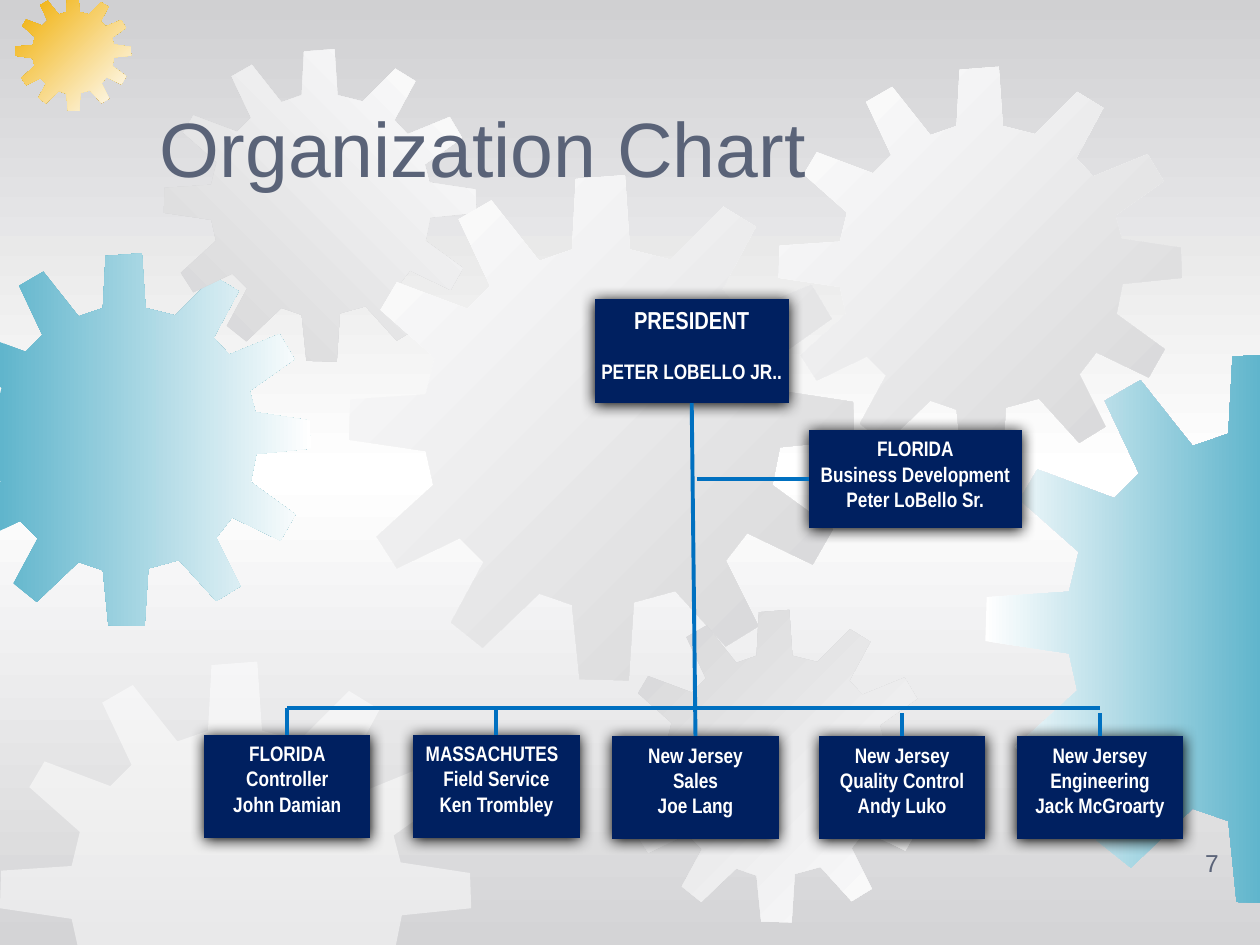
from dataclasses import dataclass

from lxml.etree import SubElement
from pptx import Presentation
from pptx.dml.color import RGBColor
from pptx.enum.shapes import MSO_CONNECTOR as Connector, MSO_SHAPE as Preset
from pptx.enum.text import MSO_ANCHOR as Anchor, PP_ALIGN as Align
from pptx.oxml.ns import qn
from pptx.util import Inches, Pt

SILVER = RGBColor(0xD4, 0xD4, 0xD6)
PALE_SILVER = RGBColor(0xD0, 0xD0, 0xD2)
WHITE = RGBColor(0xFF, 0xFF, 0xFF)
TEAL = RGBColor(0x60, 0xB5, 0xCC)
GOLD = RGBColor(0xF0, 0xAD, 0x00)
SLATE = RGBColor(0x5A, 0x63, 0x78)
NAVY = RGBColor(0x00, 0x20, 0x60)
BLUE = RGBColor(0x00, 0x70, 0xC0)
BLACK = RGBColor(0x00, 0x00, 0x00)

COLUMNS, ROWS = 100, 75
CELL = Inches(0.1)
GEAR_SPAN = 401
GEAR_OUTLINE = (
    (255, 67), (223, 59), (219, 0), (180, 3), (177, 59), (151, 68), (113, 20), (87, 35),
    (112, 88), (94, 106), (38, 85), (25, 107), (68, 145), (61, 174), (1, 178), (0, 210),
    (61, 219), (67, 246), (22, 287), (38, 312), (88, 288), (107, 307), (81, 355), (106, 375),
    (151, 332), (177, 341), (183, 400), (222, 401), (226, 339), (259, 330), (299, 374), (325, 358),
    (299, 306), (316, 284), (368, 309), (384, 281), (336, 246), (342, 216), (401, 210), (400, 180),
    (341, 171), (335, 148), (383, 114), (367, 87), (313, 109), (296, 91), (323, 41), (297, 25),
)


@dataclass
class Gear:
    """A gear placed by column, row and span in grid cells."""
    column: float
    row: float
    span: float
    colors: tuple
    angle: int = 0


@dataclass
class Post:
    """A position in the organization with its box on the grid."""
    column: float
    row: float
    width: float
    height: float
    lines: tuple
    first_size: int = 12
    first_align: Align = Align.CENTER
    gap: int = 0


@dataclass
class Link:
    """A straight line between two grid points."""
    start: tuple
    end: tuple


@dataclass
class Caption:
    """A free text on the grid."""
    column: float
    row: float
    width: float
    height: float
    text: str
    size: int
    align: Align


GEARS = (
    Gear(-4.9, 20.1, 29.6, (TEAL, WHITE)),
    Gear(1.2, -0.4, 9.2, (GOLD, WHITE), 45),
    Gear(13, 3.9, 24.8, (SILVER, WHITE), 315),
    Gear(27.7, 13.9, 40.1, (WHITE, SILVER), 45),
    Gear(0, 52.5, 37.4, (WHITE,)),
    Gear(49.1, 48.4, 24.8, (SILVER, WHITE), 45),
    Gear(61.8, 5.3, 32, (WHITE, SILVER), 45),
    Gear(78.2, 28, 43.7, (WHITE, TEAL)),
)
CAPTIONS = (
    Caption(11.7, 3.3, 85, 12.5, "Organization Chart", 44, Align.LEFT),
    Caption(76.9, 65.1, 20.8, 5, "7", 14, Align.RIGHT),
)
POSTS = (
    Post(47.2, 23.7, 15.4, 8.3, ("PRESIDENT", "PETER LOBELLO JR.."), first_size=14, gap=14),
    Post(16.2, 58.3, 13.2, 8.2, ("FLORIDA", "Controller", "John Damian")),
    Post(32.8, 58.3, 13.2, 8.2, ("MASSACHUTES", "Field Service", "Ken Trombley"), first_align=Align.LEFT),
    Post(48.6, 58.4, 13.2, 8.2, ("New Jersey", "Sales", "Joe Lang")),
    Post(65, 58.4, 13.2, 8.2, ("New Jersey", "Quality Control", "Andy Luko")),
    Post(80.7, 58.4, 13.2, 8.2, ("New Jersey", "Engineering", "Jack McGroarty")),
    Post(64.2, 34.1, 16.9, 7.8, ("FLORIDA", "Business Development", "Peter LoBello Sr.")),
)
LINKS = (
    Link((22.8, 56.2), (87.3, 56.2)),
    Link((22.8, 56.2), (22.8, 58.3)),
    Link((39.4, 56.2), (39.4, 58.3)),
    Link((71.6, 56.6), (71.6, 58.4)),
    Link((87.3, 56.6), (87.3, 58.4)),
    Link((54.9, 32), (55.2, 58.4)),
    Link((55.3, 38), (64.2, 38)),
)


def cells(*counts: float) -> list:
    """Turn grid counts into lengths."""
    return [round(count * CELL) for count in counts]


def apply(target, formats: dict) -> None:
    """Set each named attribute of the target."""
    for name, value in formats.items():
        setattr(target, name, value)


def paint_gradient(root, stops: tuple, angle: int) -> None:
    """Swap the first solid fill under root for a linear gradient."""
    solid = next(root.iter(qn("a:solidFill")))
    gradient = solid.makeelement(qn("a:gradFill"), {"rotWithShape": "1"})
    stop_list = SubElement(gradient, qn("a:gsLst"))
    for position, color in stops:
        stop = SubElement(stop_list, qn("a:gs"), pos=str(position * 1000))
        SubElement(stop, qn("a:srgbClr"), val=str(color))
    SubElement(gradient, qn("a:lin"), ang=str(angle * 60000), scaled="0")
    solid.getparent().replace(solid, gradient)


def clip(points: list, axis: int, bound: float, side: int) -> list:
    """Cut a polygon at one edge of the page."""
    kept = []
    for before, after in zip(points[-1:] + points[:-1], points):
        depths = [side * (point[axis] - bound) for point in (before, after)]
        if depths[0] * depths[1] < 0:
            share = depths[0] / (depths[0] - depths[1])
            kept.append(tuple(a + share * (b - a) for a, b in zip(before, after)))
        if depths[1] >= 0:
            kept.append(after)
    return kept


def draw_gear(page, gear: Gear) -> None:
    """Draw a gear, cut off at the page edges."""
    scale = gear.span / GEAR_SPAN
    points = [(gear.column + x * scale, gear.row + y * scale) for x, y in GEAR_OUTLINE]
    for axis, limit in enumerate((COLUMNS, ROWS)):
        points = clip(clip(points, axis, 0, 1), axis, limit, -1)
    corners = [cells(*point) for point in points]
    builder = page.shapes.build_freeform(*corners[0])
    builder.add_line_segments(corners[1:], close=True)
    shape = builder.convert_to_shape()
    shape.shadow.inherit = False
    shape.line.fill.background()
    shape.fill.solid()
    shape.fill.fore_color.rgb = gear.colors[0]
    if len(gear.colors) > 1:
        paint_gradient(shape.element, tuple(zip((0, 100), gear.colors)), gear.angle)
    else:
        SubElement(next(shape.element.iter(qn("a:srgbClr"))), qn("a:alpha"), val="50000")


def write(para, text: str, size: int, align: Align, formats: dict) -> None:
    """Fill a paragraph with one formatted span."""
    para.alignment = align
    span = para.add_run()
    span.text = text
    apply(span.font, {"size": Pt(size), **formats})
    span.font.color.rgb = WHITE if formats.get("bold") else SLATE


def draw_caption(page, caption: Caption) -> None:
    """Draw a free text standing on the bottom of its box."""
    box = page.shapes.add_textbox(*cells(caption.column, caption.row, caption.width, caption.height))
    apply(box.text_frame, {"word_wrap": True, "vertical_anchor": Anchor.BOTTOM})
    write(box.text_frame.paragraphs[0], caption.text, caption.size, caption.align, {"name": "Arial"})


def draw_post(page, post: Post) -> None:
    """Draw a shadowed box with the lines of one post."""
    place = cells(post.column, post.row, post.width, post.height)
    box = page.shapes.add_shape(Preset.FLOWCHART_PROCESS, *place)
    box.fill.solid()
    box.fill.fore_color.rgb = NAVY
    box.line.fill.background()
    box.shadow.inherit = False
    effects = next(box.element.iter(qn("a:effectLst")))
    shadow = SubElement(effects, qn("a:outerShdw"), blurRad=str(Pt(8.5)), dist=str(Pt(1)), dir="5400000")
    SubElement(shadow, qn("a:srgbClr"), val=str(BLACK))
    frame = box.text_frame
    apply(frame, {"word_wrap": False, "vertical_anchor": Anchor.TOP})
    formats = {"name": "Arial Narrow", "bold": True}
    write(frame.paragraphs[0], post.lines[0], post.first_size, post.first_align, formats)
    for line in post.lines[1:]:
        para = frame.add_paragraph()
        para.space_before = Pt(post.gap)
        write(para, line, 12, Align.CENTER, formats)


def draw_link(page, link: Link) -> None:
    """Draw a plain line between two points."""
    line = page.shapes.add_connector(Connector.STRAIGHT, *cells(*link.start, *link.end))
    line.line.color.rgb = BLUE
    line.line.width = Pt(2.25)
    SubElement(line.element.spPr, qn("a:effectLst"))


def main() -> None:
    """Build the organization chart and save it."""
    deck = Presentation()
    apply(deck, dict(zip(("slide_width", "slide_height"), cells(COLUMNS, ROWS))))
    page = deck.slides.add_slide(deck.slide_layouts[6])
    page.background.fill.solid()
    page.background.fill.fore_color.rgb = WHITE
    paint_gradient(page.element, ((0, PALE_SILVER), (50, WHITE), (100, SILVER)), 90)
    for draw, items in ((draw_gear, GEARS), (draw_caption, CAPTIONS), (draw_post, POSTS), (draw_link, LINKS)):
        for item in items:
            draw(page, item)
    deck.save("out.pptx")


if __name__ == "__main__":
    main()
